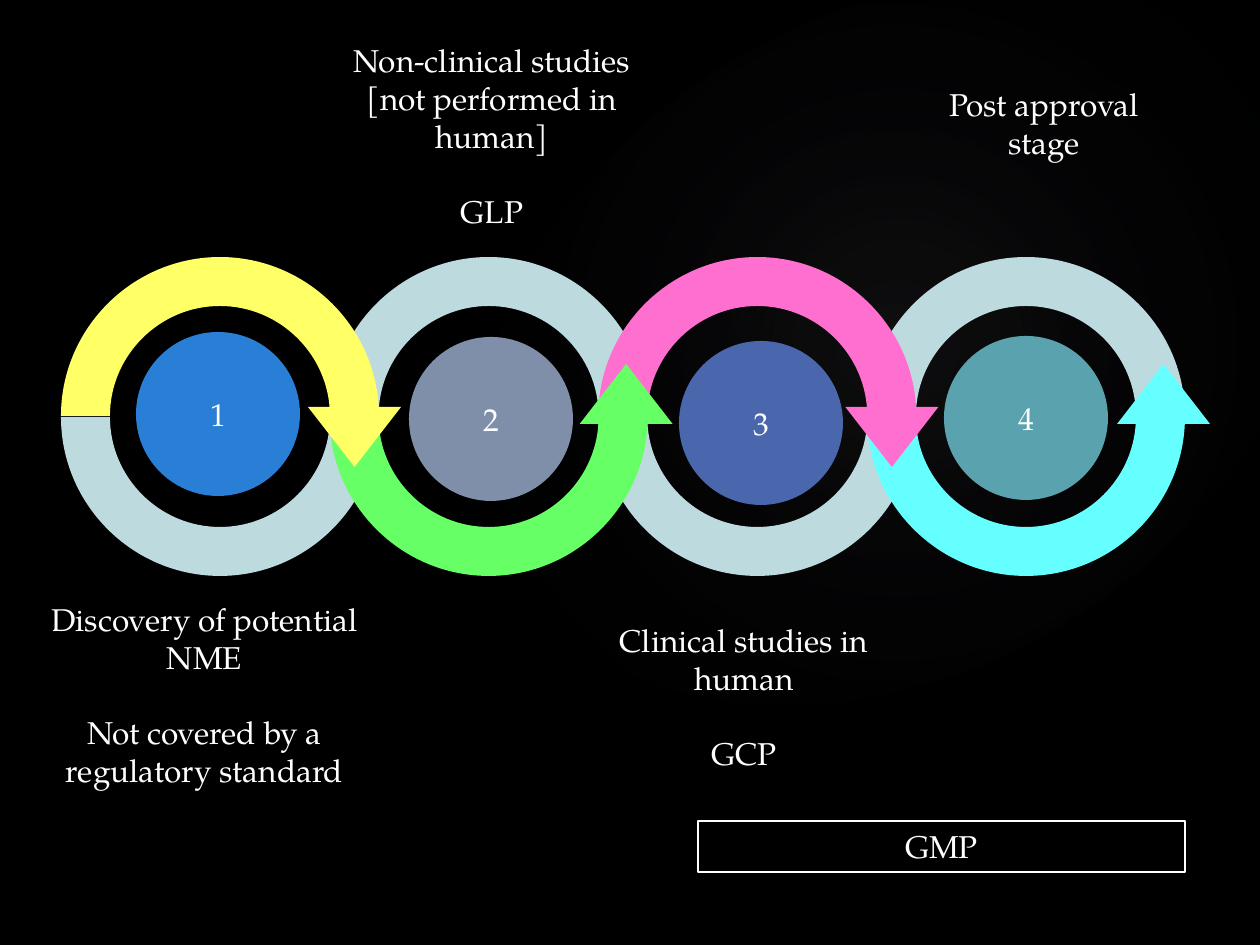
from itertools import pairwise

from lxml.etree import SubElement
from pptx import Presentation
from pptx.dml.color import RGBColor
from pptx.enum.shapes import MSO_SHAPE as Preset
from pptx.enum.text import MSO_ANCHOR as Anchor, MSO_AUTO_SIZE as AutoSize, PP_ALIGN as Align
from pptx.oxml.ns import qn
from pptx.util import Pt

THEME = {
    "background": "000000", "text": "FFFFFF", "track": "BDDADF",
    "font": "TeX Gyre Pagella", "size": 18, "gap": 21.5,
    "glow": [(0, "C4BCC6", 8), (58, "242852", 0)],
}
STAGES = [
    {"number": "1", "arrow": "FFFF66", "disc": "297FD5", "disc_at": (136, 332),
     "caption": ["Discovery of potential NME", "Not covered by a regulatory standard"],
     "caption_box": (30, 594, 349, 204)},
    {"number": "2", "arrow": "66FF66", "disc": "7F8FA9", "disc_at": (409, 337),
     "caption": ["Non-clinical studies [not performed in human]", "GLP"],
     "caption_box": (331, 35, 322, 204)},
    {"number": "3", "arrow": "FF6FCF", "disc": "4A66AC", "disc_at": (679, 341),
     "caption": ["Clinical studies in human", "GCP"],
     "caption_box": (598, 615, 292, 165)},
    {"number": "4", "arrow": "66FFFF", "disc": "5AA2AE", "disc_at": (944, 336),
     "caption": ["Post approval stage"],
     "caption_box": (898, 79, 292, 90)},
]
GMP, GMP_BOX = "GMP", (698, 821, 487, 51)
GLOW_BOX, GLOW_TURN = (451, 16, 893, 655), 328.7

PX = 914400 / 126
FIRST_CENTER, PITCH = 220, 268.67
OUTER, INNER = 159, 110
TOP_BASE, BOTTOM_BASE = 416, 417
HEAD_W, HEAD_H, HEAD_UP_Y, HEAD_DOWN_Y = 93, 60, 364, 407
DISC = 164
ROUNDNESS = 0.55


def emu(*lengths):
    return [round(length * PX) for length in lengths]


def paint(shape, color=None):
    shape.shadow.inherit = False
    shape.line.fill.background()
    if color:
        shape.fill.solid()
        shape.fill.fore_color.rgb = RGBColor.from_string(color)
    else:
        shape.fill.background()
    return shape


def write(shape, lines, anchor=Anchor.TOP, grow=True):
    frame = shape.text_frame
    frame.word_wrap = True
    frame.vertical_anchor = anchor
    if grow:
        frame.auto_size = AutoSize.SHAPE_TO_FIT_TEXT
    for index, line in enumerate(lines):
        paragraph = frame.add_paragraph() if index else frame.paragraphs[0]
        paragraph.alignment = Align.CENTER
        if index:
            paragraph.space_before = Pt(THEME["gap"])
        run = paragraph.add_run()
        run.text = line
        run.font.name = THEME["font"]
        run.font.size = Pt(THEME["size"])
        run.font.color.rgb = RGBColor.from_string(THEME["text"])


def add_glow(shapes):
    glow = paint(shapes.add_shape(Preset.OVAL, *emu(*GLOW_BOX)))
    glow.rotation = GLOW_TURN
    glow.fill.gradient()
    gradient = glow._element.spPr.find(qn("a:gradFill"))
    for child in list(gradient):
        gradient.remove(child)
    stops = SubElement(gradient, qn("a:gsLst"))
    for position, color, opacity in THEME["glow"]:
        stop = SubElement(stops, qn("a:gs"), pos=str(position * 1000))
        tint = SubElement(stop, qn("a:srgbClr"), val=color)
        SubElement(tint, qn("a:alpha"), val=str(opacity * 1000))
    focus = SubElement(gradient, qn("a:path"), path="circle")
    SubElement(focus, qn("a:fillToRect"), l="50000", t="50000", r="50000", b="50000")


def bend_quarter(segment, start, end, corner):
    segment.tag = qn("a:cubicBezTo")
    for index, point in enumerate((start, end)):
        x, y = (round(p + ROUNDNESS * (c - p)) for p, c in zip(point, corner))
        handle = SubElement(segment, qn("a:pt"), x=str(x), y=str(y))
        segment.insert(index, handle)


def add_half_ring(shapes, center, upper, color):
    base, side = (TOP_BASE, -1) if upper else (BOTTOM_BASE, 1)

    def ends_and_crest(radius):
        return [emu(center - radius, base), emu(center, base + side * radius),
                emu(center + radius, base)]

    outline = ends_and_crest(OUTER) + ends_and_crest(INNER)[::-1]
    builder = shapes.build_freeform(*outline[0])
    builder.add_line_segments(outline[1:], close=True)
    ring = paint(builder.convert_to_shape(), color)

    segments = list(ring._element.spPr.iter(qn("a:lnTo")))
    local = [(x - ring.left, y - ring.top) for x, y in outline]
    corners = [(local[i][0], local[crest][1]) for i, crest in ((0, 1), (2, 1), (3, 4), (5, 4))]
    curves = [0, 1, 3, 4]
    spans = list(pairwise(local))
    for index, corner in zip(curves, corners):
        bend_quarter(segments[index], *spans[index], corner)


def add_arrowhead(shapes, center, downward, color):
    middle = center + (OUTER + INNER) / 2 + (0 if downward else 3)
    top = HEAD_DOWN_Y if downward else HEAD_UP_Y
    head = shapes.add_shape(Preset.ISOSCELES_TRIANGLE,
                            *emu(middle - HEAD_W / 2, top, HEAD_W, HEAD_H))
    paint(head, color).rotation = 180 if downward else 0


def main():
    deck = Presentation()
    deck.slide_width, deck.slide_height = emu(1260, 945)
    slide = deck.slides.add_slide(deck.slide_layouts[6])
    slide.background.fill.solid()
    slide.background.fill.fore_color.rgb = RGBColor.from_string(THEME["background"])
    shapes = slide.shapes
    add_glow(shapes)

    rings = [(FIRST_CENTER + PITCH * i, i % 2 == 0, stage["arrow"])
             for i, stage in enumerate(STAGES)]
    for center, arrow_on_top, _ in rings:
        add_half_ring(shapes, center, not arrow_on_top, THEME["track"])
    for center, arrow_on_top, color in reversed(rings):
        add_half_ring(shapes, center, arrow_on_top, color)
        add_arrowhead(shapes, center, arrow_on_top, color)

    for stage in STAGES:
        disc = shapes.add_shape(Preset.OVAL, *emu(*stage["disc_at"], DISC, DISC))
        write(paint(disc, stage["disc"]), [stage["number"]], Anchor.MIDDLE, grow=False)
    for stage in STAGES:
        write(shapes.add_textbox(*emu(*stage["caption_box"])), stage["caption"])

    standard = paint(shapes.add_shape(Preset.RECTANGLE, *emu(*GMP_BOX)))
    standard.line.color.rgb = RGBColor.from_string(THEME["text"])
    write(standard, [GMP])

    deck.save("out.pptx")


if __name__ == "__main__":
    main()
